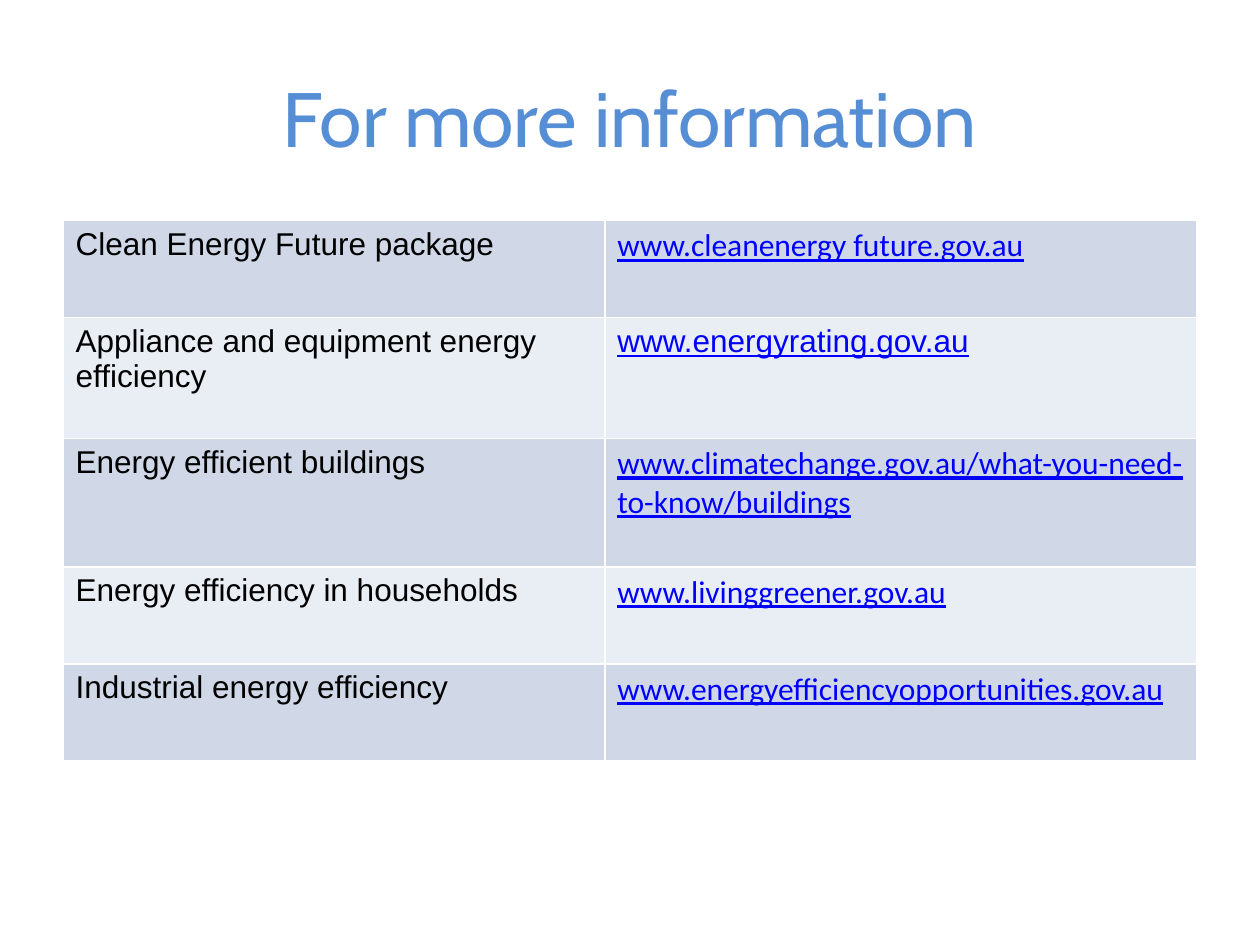
"""Build the "For more information" slide with its table of web addresses."""
from lxml.etree import SubElement
from pptx import Presentation
from pptx.dml.color import RGBColor
from pptx.enum.text import MSO_ANCHOR, PP_ALIGN
from pptx.oxml.ns import qn
from pptx.util import Inches, Pt

TITLE_BLUE = RGBColor(0x55, 0x8E, 0xD5)
LINK_BLUE = RGBColor(0x00, 0x00, 0xFF)
BLACK = RGBColor(0x00, 0x00, 0x00)
WHITE = RGBColor(0xFF, 0xFF, 0xFF)
BANDS = RGBColor(0xD0, 0xD8, 0xE8), RGBColor(0xE9, 0xED, 0xF4)

COLUMN_WIDTHS = 4.3, 4.7
TOPICS = [
    ("Clean Energy Future package", "www.cleanenergy future.gov.au", "Calibri", 0.77),
    ("Appliance and equipment energy efficiency", "www.energyrating.gov.au", "Arial", 0.96),
    ("Energy efficient buildings",
     "www.climatechange.gov.au/what-you-need-to-know/buildings", "Calibri", 1.02),
    ("Energy efficiency in households", "www.livinggreener.gov.au", "Calibri", 0.77),
    ("Industrial energy efficiency", "www.energyefficiencyopportunities.gov.au", "Calibri", 0.77),
]


class InfoSlide:
    """Hold the slide and the style of its title and table."""

    def __init__(self, deck):
        self.page = deck.slides.add_slide(deck.slide_layouts[5])
        self.title_size = Pt(44)
        self.text_size = Pt(18)
        self.border_width = Pt(1)

    def set_text(self, frame, text, font_name, size, color, underline=False):
        frame.text = text
        font = frame.paragraphs[0].runs[0].font
        font.name, font.size, font.underline = font_name, size, underline
        font.bold = False
        font.color.rgb = color

    def title(self, text):
        box = self.page.shapes.title
        box.left, box.top = Inches(0.5), Inches(0.3)
        box.width, box.height = Inches(9), Inches(1.25)
        frame = box.text_frame
        self.set_text(frame, text, "Cabin", self.title_size, TITLE_BLUE)
        frame.vertical_anchor = MSO_ANCHOR.MIDDLE
        frame.paragraphs[0].alignment = PP_ALIGN.CENTER

    def border(self, cell):
        properties = cell._tc.get_or_add_tcPr()
        for position, side in enumerate(("a:lnL", "a:lnR", "a:lnT", "a:lnB")):
            line = SubElement(properties, qn(side), w=str(self.border_width))
            fill = SubElement(line, qn("a:solidFill"))
            SubElement(fill, qn("a:srgbClr"), val=str(WHITE))
            properties.insert(position, line)

    def table(self, topics):
        height = sum(topic[-1] for topic in topics)
        table = self.page.shapes.add_table(
            len(topics), len(COLUMN_WIDTHS),
            Inches(0.5), Inches(1.75), Inches(9), Inches(height)).table
        table.first_row = table.horz_banding = False
        for column, width in zip(table.columns, COLUMN_WIDTHS):
            column.width = Inches(width)
        for index, (topic, address, link_font, row_height) in enumerate(topics):
            row = table.rows[index]
            row.height = Inches(row_height)
            for cell in row.cells:
                cell.fill.solid()
                cell.fill.fore_color.rgb = BANDS[index % 2]
                self.border(cell)
            name, link = row.cells
            self.set_text(name.text_frame, topic, "Arial", self.text_size, BLACK)
            self.set_text(link.text_frame, address, link_font, self.text_size, LINK_BLUE, True)


def main():
    deck = Presentation()
    deck.slide_width, deck.slide_height = Inches(10), Inches(7.5)
    slide = InfoSlide(deck)
    slide.title("For more information")
    slide.table(TOPICS)
    deck.save("out.pptx")


if __name__ == "__main__":
    main()
